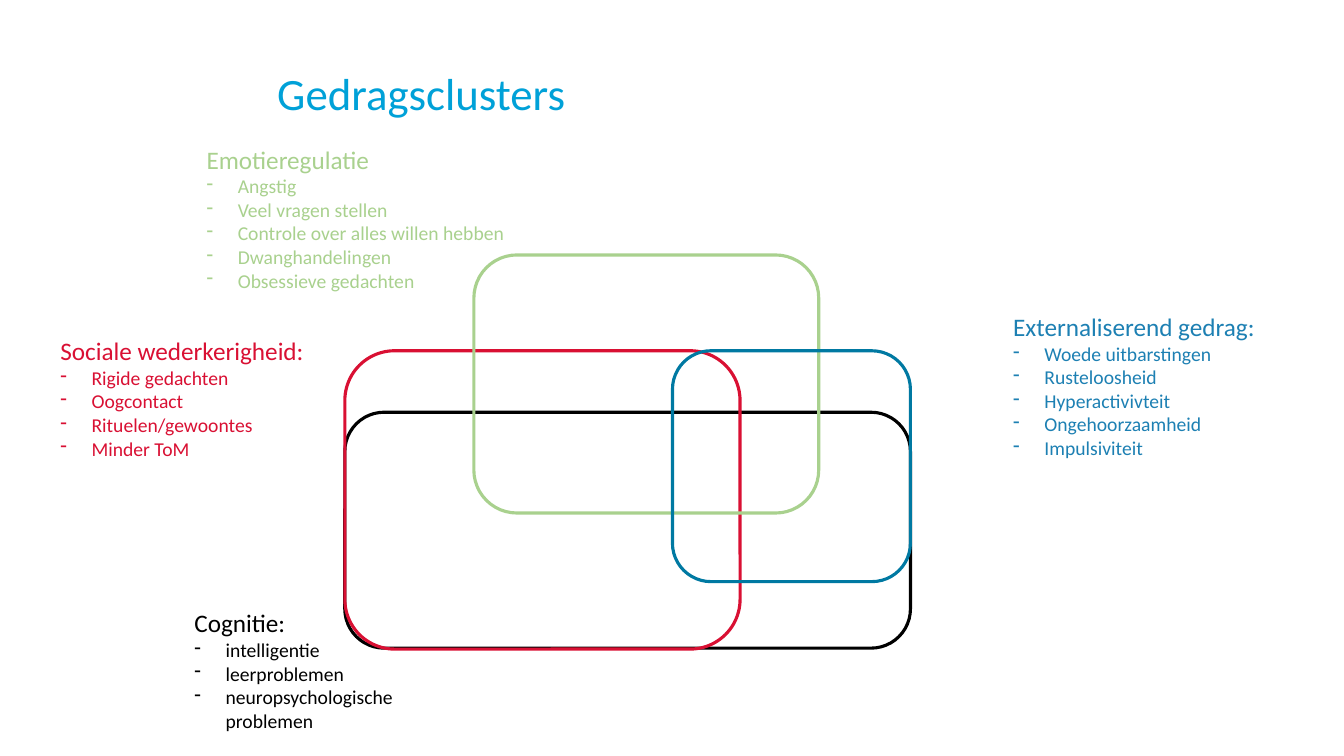
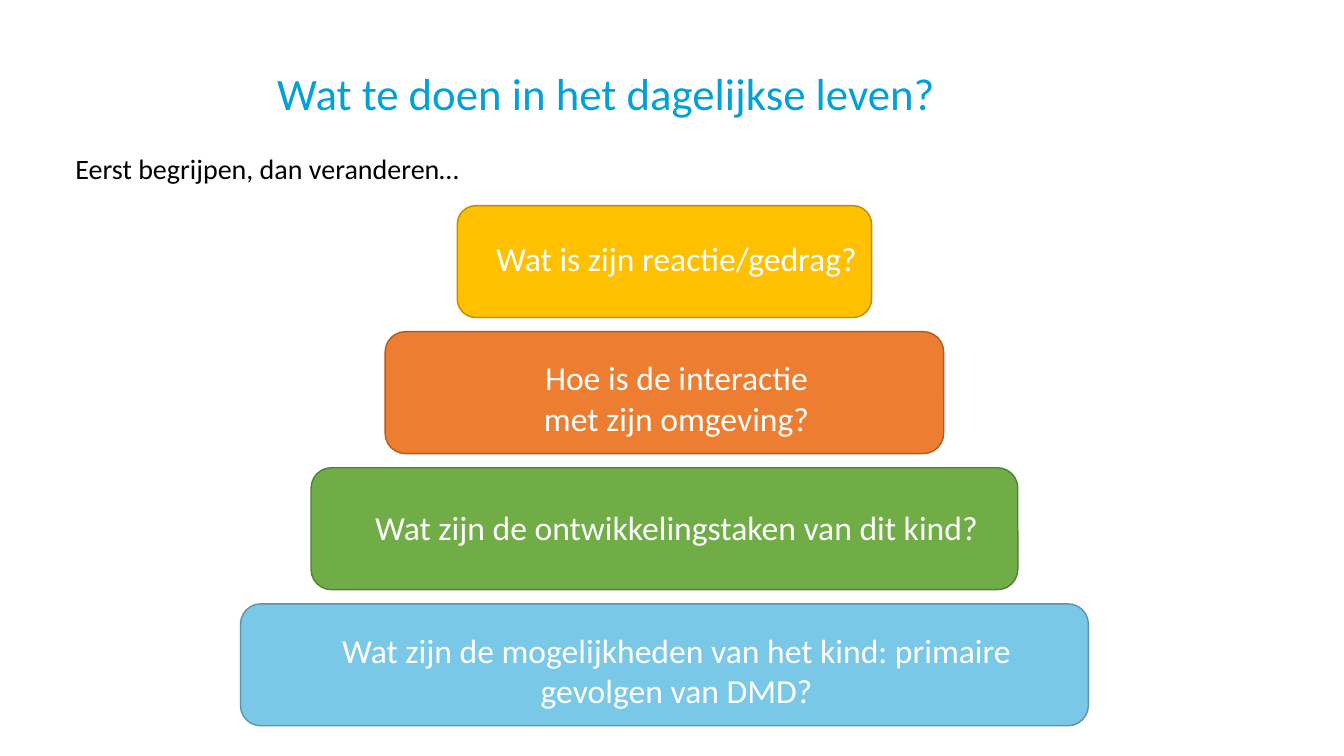
"""Build two slides on behaviour clusters and a pyramid of questions."""
from lxml import etree
from pptx import Presentation
from pptx.dml.color import RGBColor
from pptx.enum.shapes import MSO_SHAPE
from pptx.enum.text import MSO_ANCHOR, PP_ALIGN
from pptx.oxml.ns import qn
from pptx.util import Inches, Pt

ROUNDED = MSO_SHAPE.ROUNDED_RECTANGLE
CENTER = PP_ALIGN.CENTER
MIDDLE = MSO_ANCHOR.MIDDLE
BOTTOM = MSO_ANCHOR.BOTTOM

FONT = "Calibri"
COLORS = {
    "title": "00A1D8", "black": "000000", "white": "FFFFFF",
    "red": "D91033", "mint": "A9D18E", "teal": "0079A2", "blue": "1D80B3",
    "yellow": "FFC000", "yellow edge": "BD8E00",
    "orange": "ED7D31", "orange edge": "AF5C24",
    "green": "70AD47", "green edge": "538035",
    "sky": "79C8E7", "sky edge": "5A94AB",
}

CLUSTER_TITLE = "Gedragsclusters"
CLUSTER_FRAMES = [
    ("black", (3.42, 4.09, 5.61, 2.34)),
    ("red", (3.42, 3.48, 3.92, 2.96)),
    ("mint", (4.7, 2.53, 3.42, 2.56)),
    ("teal", (6.67, 3.48, 2.36, 2.29)),
]
CLUSTERS = [
    ("Sociale wederkerigheid:", "red", (0.5, 3.28, 2.66, 1.35),
     ["Rigide gedachten", "Oogcontact", "Rituelen/gewoontes", "Minder ToM"]),
    ("Emotieregulatie", "mint", (1.95, 1.38, 5.08, 1.58),
     ["Angstig", "Veel vragen stellen", "Controle over alles willen hebben",
      "Dwanghandelingen", "Obsessieve gedachten"]),
    ("Externaliserend gedrag:", "blue", (9.95, 3.04, 3.22, 1.58),
     ["Woede uitbarstingen", "Rusteloosheid", "Hyperactivivteit",
      "Ongehoorzaamheid", "Impulsiviteit"]),
    ("Cognitie:", "black", (1.83, 5.98, 2.66, 1.35),
     ["intelligentie", "leerproblemen", "neuropsychologische problemen"]),
]

PYRAMID_TITLE = "Wat te doen in het dagelijkse leven?"
PYRAMID_INTRO = "Eerst begrijpen, dan veranderen…"
PYRAMID_STEPS = [
    ("Wat is zijn reactie/gedrag?", "yellow", 4.11, 1.11, -0.04),
    ("Hoe is de interactie\vmet zijn omgeving?", "orange", 5.54, 1.21, 0.05),
    ("Wat zijn de ontwikkelingstaken van dit kind?", "green", 7.01, 1.21, -0.02),
    ("Wat zijn de mogelijkheden van het kind: primaire gevolgen van DMD?",
     "sky", 8.41, 1.21, 0.05),
]
PYRAMID_TOP, PYRAMID_CENTER, STEP_GAP = 2.04, 6.59, 0.14
LABEL_WIDTH, LABEL_SHIFT = 7.13, 0.12


def color(name):
    return RGBColor.from_string(COLORS[name])


def style(para, size, color_name):
    for span in para.runs:
        span.font.name = FONT
        span.font.size = Pt(size)
        span.font.color.rgb = color(color_name)


def set_margins(frame, *margins):
    (frame.margin_left, frame.margin_top,
     frame.margin_right, frame.margin_bottom) = map(Inches, margins)


def add_text(page, area, text, size, color_name):
    frame = page.shapes.add_textbox(*map(Inches, area)).text_frame
    frame.word_wrap = True
    frame.text = text
    style(frame.paragraphs[0], size, color_name)
    return frame


def add_frame(page, area, line_name, line_width, fill_name=None):
    box = page.shapes.add_shape(ROUNDED, *map(Inches, area))
    box.shadow.inherit = False
    box.line.color.rgb = color(line_name)
    box.line.width = Pt(line_width)
    if fill_name:
        box.fill.solid()
        box.fill.fore_color.rgb = color(fill_name)
    else:
        box.fill.background()
    return box


def add_page(deck, title):
    page = deck.slides.add_slide(deck.slide_layouts[6])
    frame = add_text(page, (2.55, 0.59, 10.06, 0.72), title, 32, "title")
    set_margins(frame, 0.2, 0, 0.2, 0.12)
    frame.vertical_anchor = BOTTOM
    frame.paragraphs[0].line_spacing = Pt(32)
    return page


def add_dash(para):
    properties = para._p.get_or_add_pPr()
    properties.set("marL", str(Inches(0.31)))
    properties.set("indent", str(-Inches(0.31)))
    etree.SubElement(properties, qn("a:buChar")).set("char", "-")


def build_clusters(deck):
    page = add_page(deck, CLUSTER_TITLE)
    for line_name, area in CLUSTER_FRAMES:
        add_frame(page, area, line_name, 2.25)
    for heading, color_name, area, items in CLUSTERS:
        frame = add_text(page, area, heading, 18, color_name)
        for item in items:
            para = frame.add_paragraph()
            para.text = item
            add_dash(para)
            style(para, 14, color_name)


def build_pyramid(deck):
    page = add_page(deck, PYRAMID_TITLE)
    add_text(page, (0.65, 1.45, 9.54, 0.44), PYRAMID_INTRO, 20, "black")
    top = PYRAMID_TOP
    for label, fill_name, width, height, drop in PYRAMID_STEPS:
        area = (PYRAMID_CENTER - width / 2, top, width, height)
        box = add_frame(page, area, fill_name + " edge", 1, fill_name)
        frame = box.text_frame
        frame.word_wrap = True
        frame.vertical_anchor = MIDDLE
        side = max(0, (width - LABEL_WIDTH) / 2 - LABEL_SHIFT)
        set_margins(frame, side + 2 * LABEL_SHIFT, max(0, 2 * drop),
                    side, max(0, -2 * drop))
        frame.text = label
        frame.paragraphs[0].alignment = CENTER
        style(frame.paragraphs[0], 24, "white")
        top += height + STEP_GAP


def main():
    deck = Presentation()
    deck.slide_width, deck.slide_height = Inches(13.33), Inches(7.5)
    build_clusters(deck)
    build_pyramid(deck)
    deck.save("out.pptx")


if __name__ == "__main__":
    main()
